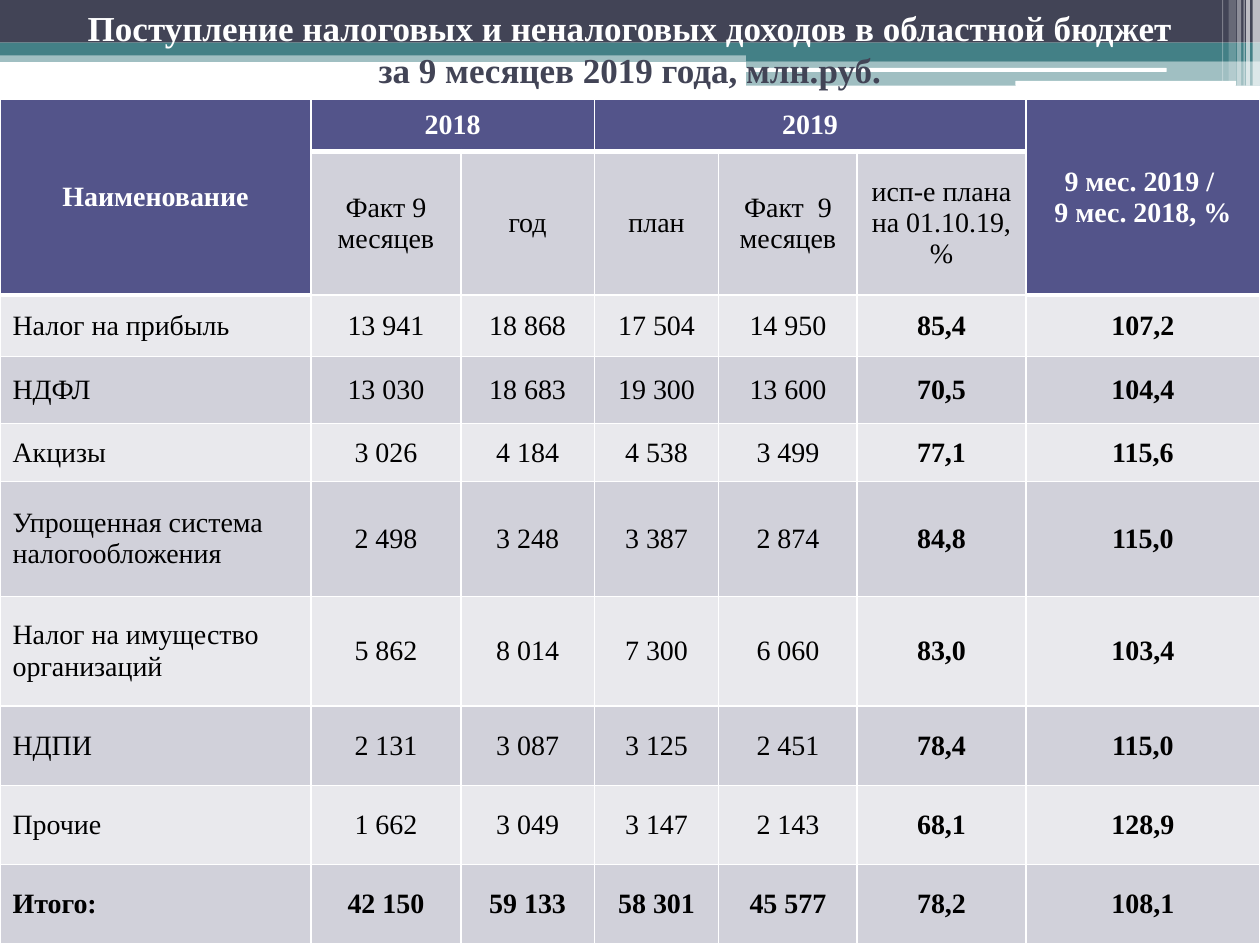
import pptx
import pptx.util
import pptx.dml.color
import pptx.enum.shapes
import pptx.enum.text
import pptx.oxml.ns
import lxml.etree

Cm = pptx.util.Cm
Pt = pptx.util.Pt
FONT = "Times New Roman"
WHITE, BLACK, DARK, TEAL = "FFFFFF", "000000", "424456", "438086"
HEAD, BAND, PALE = "53548A", "D1D1DA", "E9E9ED"

# left, top, width, height (cm), colour, opacity in percent
BARS = [
    (0, 1.02, 25.4, 0.23, TEAL, 50),
    (0, 0, 25.4, 0.86, DARK, 100),
    (0, 0.86, 25.4, 0.26, TEAL, 100),
    (15.04, 0.99, 10.36, 0.24, TEAL, 100),
    (15.04, 1.23, 10.36, 0.5, TEAL, 50),
]
PILLS = [
    (15.01, 1.37, 8.51, 0.08, WHITE, 100),
    (20.47, 1.63, 4.45, 0.1, WHITE, 100),
]
# left, width, height (cm), opacity in percent
STRIPES = [
    (25.25, 0.15, 1.73, 65),
    (25.12, 0.08, 1.73, 65),
    (25.07, 0.02, 1.73, 60),
    (24.94, 0.08, 1.73, 40),
    (24.77, 0.15, 1.63, 20),
    (24.64, 0.02, 1.63, 30),
]

COLS = [6.27, 3.02, 2.69, 2.51, 2.79, 3.4, 4.72]
ROWS = [1.04, 2.9, 1.24, 1.35, 1.17, 2.31, 2.21, 1.6, 1.6, 1.6]
# row, column, last row, last column of each merged heading
SPANS = [(0, 0, 1, 0), (0, 1, 0, 2), (0, 3, 0, 5), (0, 6, 1, 6)]
DATA = [
    ["Наименование", "2018", "", "2019", "", "", "9 мес. 2019 / \n9 мес. 2018, %"],
    ["", "Факт 9 месяцев", "год", "план", "Факт  9 месяцев",
     "исп-е плана на 01.10.19, %", ""],
    ["Налог на прибыль", "13 941", "18 868", "17 504", "14 950", "85,4", "107,2"],
    ["НДФЛ", "13 030", "18 683", "19 300", "13 600", "70,5", "104,4"],
    ["Акцизы", "3 026", "4 184", "4 538", "3 499", "77,1", "115,6"],
    ["Упрощенная система налогообложения",
     "2 498", "3 248", "3 387", "2 874", "84,8", "115,0"],
    ["Налог на имущество организаций",
     "5 862", "8 014", "7 300", "6 060", "83,0", "103,4"],
    ["НДПИ", "2 131", "3 087", "3 125", "2 451", "78,4", "115,0"],
    ["Прочие", "1 662", "3 049", "3 147", "2 143", "68,1", "128,9"],
    ["Итого:", "42 150", "59 133", "58 301", "45 577", "78,2", "108,1"],
]


def paint(fill, color, alpha=100):
    fill.solid()
    fill.fore_color.rgb = pptx.dml.color.RGBColor.from_string(color)
    if alpha < 100:
        tone = fill._xPr.find(".//" + pptx.oxml.ns.qn("a:srgbClr"))
        lxml.etree.SubElement(tone, pptx.oxml.ns.qn("a:alpha"), val=str(alpha * 1000))


def write(para, text, size, color, bold):
    """Add a run for each line of text, with line breaks between them."""
    for i, line in enumerate(text.split("\n")):
        if i:
            para.add_line_break()
        run = para.add_run()
        run.text = line
        run.font.name = FONT
        run.font.size = Pt(size)
        run.font.bold = bold
        paint(run.font.fill, color)


def add_bar(slide, box, color, alpha, kind="RECTANGLE"):
    form = getattr(pptx.enum.shapes.MSO_SHAPE, kind)
    bar = slide.shapes.add_shape(form, *map(Cm, box))
    bar.shadow.inherit = False
    bar.line.fill.background()
    paint(bar.fill, color, alpha)


def add_banner(slide, left, top):
    for kind, parts in (("RECTANGLE", BARS), ("ROUNDED_RECTANGLE", PILLS)):
        for x, y, w, h, color, alpha in parts:
            add_bar(slide, (left + x, top + y, w, h), color, alpha, kind)
    for x, w, h, alpha in STRIPES:
        add_bar(slide, (left + x, top, w, h), WHITE, alpha)


def add_title(slide, left, top, width, height):
    frame = slide.shapes.add_textbox(*map(Cm, (left, top, width, height))).text_frame
    frame.word_wrap = True
    frame.vertical_anchor = pptx.enum.text.MSO_ANCHOR.MIDDLE
    frame.margin_bottom = Cm(0.87)
    para = frame.paragraphs[0]
    para.alignment = pptx.enum.text.PP_ALIGN.CENTER
    write(para, "Поступление налоговых и неналоговых доходов в областной бюджет",
          20, WHITE, True)
    para.add_line_break()
    write(para, "за 9 месяцев 2019 года, млн.руб.", 20, DARK, True)


def add_edges(cell, base):
    """Draw white borders; base is the width of the lower one in points."""
    props = cell._tc.get_or_add_tcPr()
    for side, width in (("L", 1), ("R", 1), ("T", 1), ("B", base)):
        edge = lxml.etree.SubElement(
            props, pptx.oxml.ns.qn("a:ln" + side), w=str(Pt(width)))
        solid = lxml.etree.SubElement(edge, pptx.oxml.ns.qn("a:solidFill"))
        lxml.etree.SubElement(solid, pptx.oxml.ns.qn("a:srgbClr"), val=WHITE)


def style_cell(cell, row, col, text):
    head = row == 0 or (row == 1 and col in (0, 6))
    add_edges(cell, 3 if head else 1)
    paint(cell.fill, HEAD if head else BAND if row % 2 else PALE)
    cell.vertical_anchor = pptx.enum.text.MSO_ANCHOR.MIDDLE
    if row > 1 and col > 0:
        cell.margin_left = cell.margin_right = 0
        cell.margin_top = cell.margin_bottom = 0
    if not text:
        return
    para = cell.text_frame.paragraphs[0]
    if row < 2 or col > 0:
        para.alignment = pptx.enum.text.PP_ALIGN.CENTER
    bold = head or row == len(DATA) - 1 or (row > 1 and col > 4)
    write(para, text, 16, WHITE if head else BLACK, bold)


def add_table(slide, left, top):
    box = map(Cm, (left, top, sum(COLS), sum(ROWS)))
    table = slide.shapes.add_table(len(ROWS), len(COLS), *box).table
    for col, width in zip(table.columns, COLS):
        col.width = Cm(width)
    for row, height in zip(table.rows, ROWS):
        row.height = Cm(height)
    for r, c, r2, c2 in SPANS:
        table.cell(r, c).merge(table.cell(r2, c2))
    for r, line in enumerate(DATA):
        for c, text in enumerate(line):
            style_cell(table.cell(r, c), r, c, text)


def main():
    deck = pptx.Presentation()
    deck.slide_width, deck.slide_height = Cm(25.4), Cm(19.05)
    slide = deck.slides.add_slide(deck.slide_layouts[6])
    add_banner(slide, 0, 0)
    add_title(slide, 0, 0, 25.4, 2.72)
    add_table(slide, 0, 2.01)
    deck.save("out.pptx")


if __name__ == "__main__":
    main()
